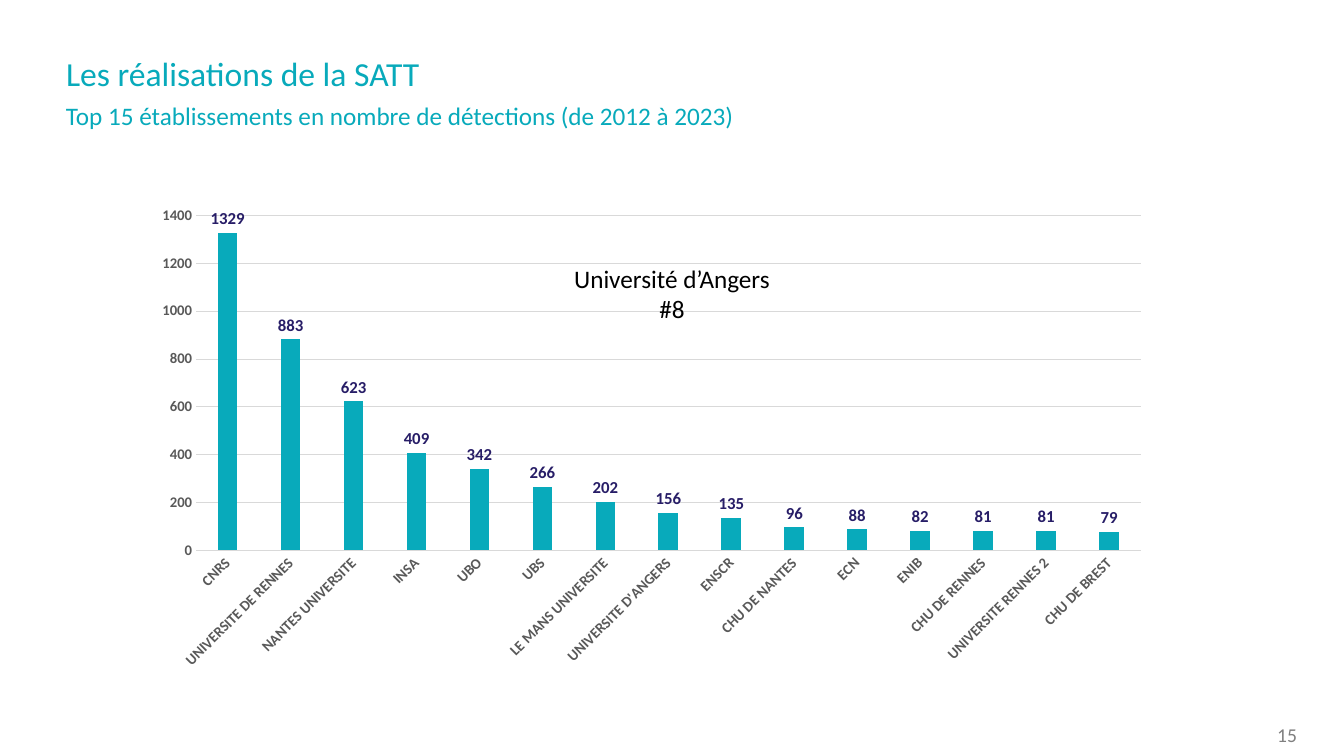
from pptx import Presentation
from pptx.chart.data import CategoryChartData
from pptx.dml.color import RGBColor
from pptx.enum.chart import XL_CHART_TYPE, XL_LABEL_POSITION, XL_TICK_MARK
from pptx.enum.text import MSO_ANCHOR, PP_ALIGN
from pptx.util import Emu, Pt

PX_PER_INCH = 100.8
FONT = "Calibri"
COLORS = {
    "teal": "08AABB",
    "violet": "271D67",
    "axis_text": "595959",
    "grid": "D9D9D9",
    "page_number": "808080",
    "black": "000000",
}
DETECTIONS = {
    "CNRS": 1329,
    "UNIVERSITE DE RENNES": 883,
    "NANTES UNIVERSITE": 623,
    "INSA": 409,
    "UBO": 342,
    "UBS": 266,
    "LE MANS UNIVERSITE": 202,
    "UNIVERSITE D'ANGERS": 156,
    "ENSCR": 135,
    "CHU DE NANTES": 96,
    "ECN": 88,
    "ENIB": 82,
    "CHU DE RENNES": 81,
    "UNIVERSITE RENNES 2": 81,
    "CHU DE BREST": 79,
}


def px(length):
    return Emu(round(length * 914400 / PX_PER_INCH))


def color(name):
    return RGBColor.from_string(COLORS[name])


def style_font(font, size, color_name, bold=False):
    font.name = FONT
    font.size = Pt(size)
    font.bold = bold
    font.color.rgb = color(color_name)


def style_line(line, color_name):
    line.color.rgb = color(color_name)
    line.width = Pt(0.75)


def write_text(shape, lines, size, color_name, align=PP_ALIGN.LEFT, spacing=1.0):
    """Fill the shape with one paragraph, its lines parted by line breaks."""
    frame = shape.text_frame
    frame.word_wrap = True
    frame.vertical_anchor = MSO_ANCHOR.TOP
    paragraph = frame.paragraphs[0]
    paragraph.alignment = align
    paragraph.line_spacing = spacing
    paragraph.space_before = Pt(0)
    for index, line in enumerate(lines):
        if index:
            paragraph.add_line_break()
        run = paragraph.add_run()
        run.text = line
        style_font(run.font, size, color_name)


def add_title(slide, left, top, width, height, text):
    title = slide.shapes.title
    title.left, title.top = px(left), px(top)
    title.width, title.height = px(width), px(height)
    write_text(title, [text], 24, "teal", spacing=0.9)


def add_text(slide, left, top, width, height, lines, size, color_name, **layout):
    box = slide.shapes.add_textbox(px(left), px(top), px(width), px(height))
    write_text(box, lines, size, color_name, **layout)


def style_axis(axis):
    axis.major_tick_mark = XL_TICK_MARK.NONE
    axis.minor_tick_mark = XL_TICK_MARK.NONE
    style_font(axis.tick_labels.font, 10.5, "axis_text", bold=True)


def add_detections_chart(slide, left, top, width, height):
    data = CategoryChartData()
    data.categories = list(DETECTIONS)
    data.add_series("Détections", list(DETECTIONS.values()))
    chart = slide.shapes.add_chart(
        XL_CHART_TYPE.COLUMN_CLUSTERED, px(left), px(top), px(width), px(height), data
    ).chart
    chart.has_title = False
    chart.has_legend = False
    style_font(chart.font, 10, "black")

    category_axis = chart.category_axis
    style_axis(category_axis)
    style_line(category_axis.format.line, "grid")
    label_body = category_axis._element.xpath("c:txPr/a:bodyPr")[0]
    label_body.set("rot", "-2700000")
    label_body.set("vert", "horz")

    value_axis = chart.value_axis
    style_axis(value_axis)
    value_axis.minimum_scale = 0
    value_axis.maximum_scale = 1400
    value_axis.major_unit = 200
    value_axis.format.line.fill.background()
    style_line(value_axis.major_gridlines.format.line, "grid")

    plot = chart.plots[0]
    plot.gap_width = 219
    plot.overlap = -27
    plot.vary_by_categories = False
    series = plot.series[0]
    series.format.fill.solid()
    series.format.fill.fore_color.rgb = color("teal")
    labels = series.data_labels
    labels.show_value = True
    labels.position = XL_LABEL_POSITION.OUTSIDE_END
    style_font(labels.font, 12, "violet", bold=True)


def main():
    presentation = Presentation()
    presentation.slide_width = px(1344)
    presentation.slide_height = px(756)
    slide = presentation.slides.add_slide(presentation.slide_layouts[5])

    add_title(slide, 56, 52, 700, 46, "Les réalisations de la SATT")
    add_text(slide, 56, 99, 704, 33,
             ["Top 15 établissements en nombre de détections (de 2012 à 2023)"],
             18, "teal", spacing=0.9)
    add_detections_chart(slide, 142, 197, 1019, 482)
    add_text(slide, 558, 258, 228, 72, ["Université d’Angers", "#8"],
             18, "black", align=PP_ALIGN.CENTER)
    add_text(slide, 1231, 718, 76, 34, ["15"], 14, "page_number", align=PP_ALIGN.RIGHT)
    presentation.save("out.pptx")


if __name__ == "__main__":
    main()
